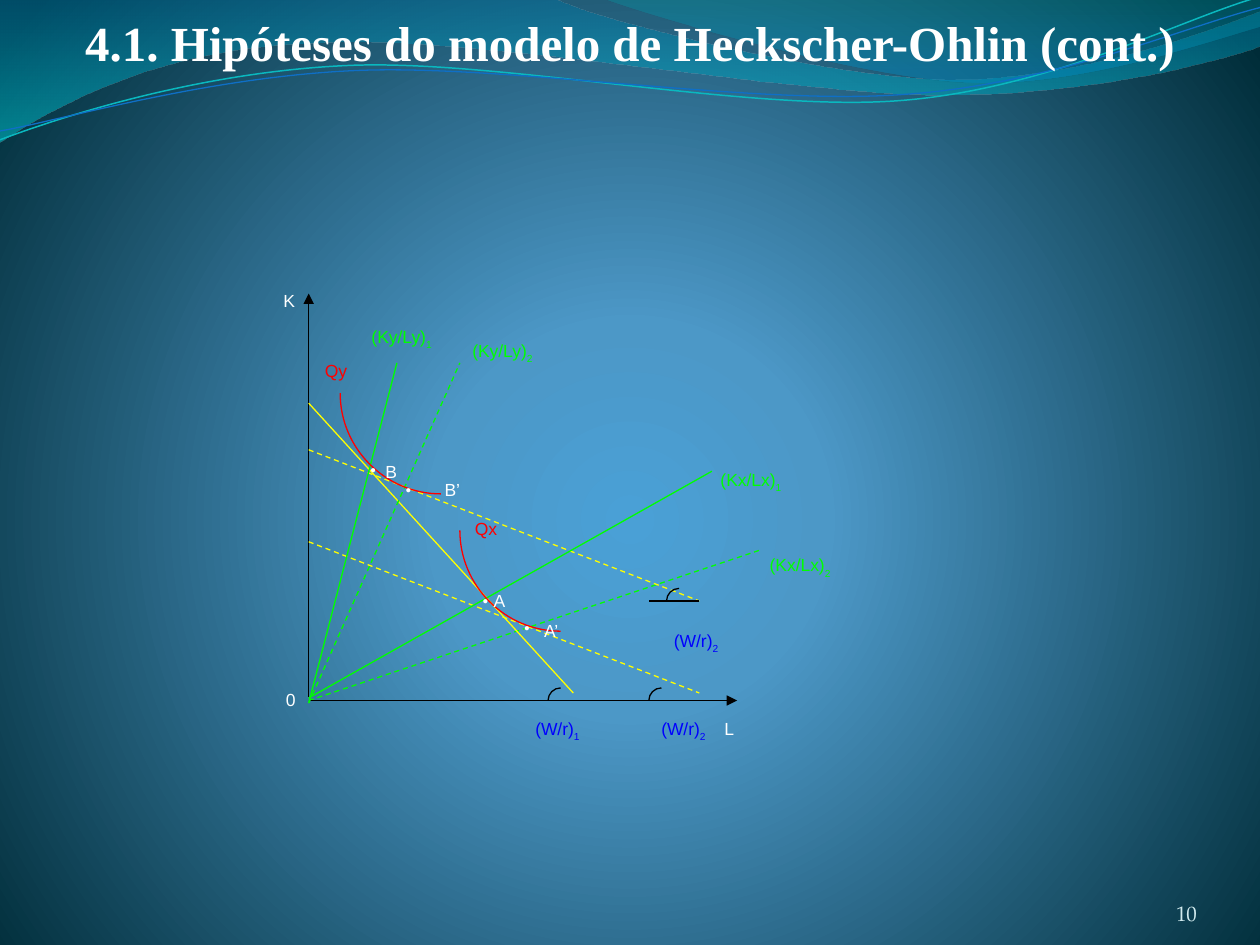
from typing import NamedTuple

from lxml.etree import SubElement
from pptx import Presentation
from pptx.dml.color import RGBColor
from pptx.enum.dml import MSO_LINE
from pptx.enum.shapes import MSO_CONNECTOR
from pptx.enum.text import MSO_ANCHOR, PP_ALIGN
from pptx.oxml.ns import qn
from pptx.util import Cm, Pt

WHITE = RGBColor(0xFF, 0xFF, 0xFF)
BLACK = RGBColor(0x00, 0x00, 0x00)
RED = RGBColor(0xFF, 0x00, 0x00)
GREEN = RGBColor(0x00, 0xFF, 0x00)
BLUE = RGBColor(0x00, 0x00, 0xFF)
YELLOW = RGBColor(0xFF, 0xFF, 0x00)
PALE = RGBColor(0xD1, 0xEA, 0xEE)
TEAL = RGBColor(0x0A, 0xB8, 0xBF)
AZURE = RGBColor(0x0F, 0x6F, 0xC6)
GLOW = [(0, RGBColor(0x4A, 0xA0, 0xD6), 100), (25, RGBColor(0x4C, 0x98, 0xC7), 100),
        (100, RGBColor(0x00, 0x2C, 0x38), 100)]
DEEP = [(0, RGBColor(0x00, 0x74, 0xA1), 45), (100, RGBColor(0x00, 0xC6, 0xCF), 55)]
SHEEN = [(0, RGBColor(0x00, 0xA1, 0xA9), 30), (80, RGBColor(0x00, 0x8B, 0xBF), 45)]
AXIS, ROOT = 2.45, 5.56  # vertical axis and horizontal axis
BEND = 0.55  # control point share of a quarter circle


class Label(NamedTuple):
    text: str
    left: float
    top: float
    color: RGBColor = WHITE
    sub: str = ""
    width: float = 0.7
    face: str = "Arial"


class Line(NamedTuple):
    start: tuple
    end: tuple
    color: RGBColor
    dash: bool = False
    arrow: bool = False


class Wave(NamedTuple):
    """Each leg holds one point for a straight run, three for a curve."""
    start: tuple
    legs: list
    stops: list = []
    color: RGBColor = BLACK
    weight: float = 0.75


WAVES = [
    Wave((0, 0), [
        [(4.4, -0.01)],
        [(4.76, 0.17), (6.64, 0.63), (7.58, 0.63)],
        [(8.53, 0.63), (9.58, 0.26), (10, 0.09)],
        [(10.01, 0.36)],
        [(9.83, 0.44), (8.7, 0.76), (7.46, 0.75)],
        [(6.22, 0.75), (3.82, 0.28), (2.57, 0.34)],
        [(1.29, 0.36), (0.46, 0.83), (-0.01, 1.13)]], DEEP),
    Wave((4.79, -0.01), [
        [(5.09, 0.11), (6.82, 0.62), (7.69, 0.65)],
        [(8.56, 0.69), (9.61, 0.32), (10, 0.21)],
        [(10, 0)]], SHEEN),
    Wave((0, 1.11), [
        [(0.48, 0.93), (1.58, 0.57), (2.77, 0.52)],
        [(3.95, 0.47), (5.93, 0.89), (7.13, 0.8)],
        [(8.33, 0.71), (9.38, 0.15), (9.98, -0.02)]], color=TEAL, weight=0.85),
    Wave((0, 1.04), [
        [(0.47, 0.96), (1.64, 0.61), (2.83, 0.56)],
        [(4.03, 0.51), (5.97, 0.84), (7.17, 0.75)],
        [(8.36, 0.67), (9.41, 0.21), (10, 0.06)]], color=AZURE),
]

LINES = [
    Line((AXIS, ROOT), (6.05, 4.36), GREEN, dash=True),
    Line((AXIS, 5.53), (AXIS, 2.33), BLACK, arrow=True),
    Line((AXIS, ROOT), (5.85, ROOT), BLACK, arrow=True),
    Line((AXIS, 3.2), (4.55, 5.5), YELLOW),
    Line((AXIS, 4.3), (5.55, 5.5), YELLOW, dash=True),
    Line((AXIS, 3.57), (5.55, 4.77), YELLOW, dash=True),
    Line((5.55, 4.77), (5.15, 4.77), BLACK),
    Line((AXIS, 5.54), (5.65, 3.74), GREEN),
    Line((AXIS, 5.58), (3.65, 2.88), GREEN, dash=True),
    Line((AXIS, 5.58), (3.15, 2.88), GREEN),
]

# left, top, size, whether it bulges downwards, colour
ARCS = [
    (2.7, 3.12, 0.8, True, RED),
    (3.65, 4.21, 0.8, True, RED),
    (5.29, 4.67, 0.1, False, BLACK),
    (5.15, 5.46, 0.1, False, BLACK),
    (4.35, 5.46, 0.1, False, BLACK),
]

DOTS = [(4.06, 4.85), (3.73, 4.63), (3.12, 3.75), (2.84, 3.59)]
LABELS = [Label("•", x, y, face="Times New Roman") for x, y in DOTS] + [
    Label("B’", 3.43, 3.75),
    Label("B", 2.96, 3.61),
    Label("A", 3.82, 4.63),
    Label("A’", 4.22, 4.87),
    Label("Qx", 3.67, 4.06, RED),
    Label("Qy", 2.48, 2.81, RED),
    Label("K", 2.15, 2.25),
    Label("L", 5.65, 5.65),
    Label("0", 2.17, 5.42),
    Label("(W/r)", 5.25, 4.95, BLUE, "2"),
    Label("(W/r)", 5.15, 5.65, BLUE, "2"),
    Label("(W/r)", 4.15, 5.65, BLUE, "1"),
    Label("(Kx/Lx)", 5.62, 3.67, GREEN, "1", 0.8),
    Label("(Kx/Lx)", 6.01, 4.35, GREEN, "2", 0.8),
    Label("(Ky/Ly)", 2.85, 2.54, GREEN, "1", 0.8),
    Label("(Ky/Ly)", 3.65, 2.65, GREEN, "2", 0.8),
]


def span(*units: float) -> list:
    """Turn layout units of 2.54 cm into lengths."""
    return [Cm(unit * 2.54) for unit in units]


def blend(host, stops: list, circle: bool = False) -> None:
    """Refill the gradient under host with stops of place, colour, opacity."""
    grad = host.xpath(".//a:gradFill")[0]
    for child in list(grad):
        grad.remove(child)
    group = SubElement(grad, qn("a:gsLst"))
    for place, color, alpha in stops:
        stop = SubElement(group, qn("a:gs"), pos=str(place * 1000))
        tint = SubElement(stop, qn("a:srgbClr"), val=str(color))
        if alpha < 100:
            SubElement(tint, qn("a:alpha"), val=str(alpha * 1000))
    if circle:
        core = SubElement(grad, qn("a:path"), {"path": "circle"})
        SubElement(core, qn("a:fillToRect"), l="10000", t="110000", r="10000", b="100000")
    else:
        SubElement(grad, qn("a:lin"), ang="5400000", scaled="1")


def draw_wave(slide, wave: Wave) -> None:
    form = slide.shapes.build_freeform(*span(*wave.start))
    points = [tuple(span(*point)) for leg in wave.legs for point in leg]
    form.add_line_segments(points, close=bool(wave.stops))
    shape = form.convert_to_shape()
    shape.shadow.inherit = False
    steps = iter(shape._element.xpath(".//a:lnTo"))
    for leg in wave.legs:
        group = [next(steps) for _ in leg]
        if len(group) == 3:
            curve = group[0].makeelement(qn("a:cubicBezTo"))
            group[0].addprevious(curve)
            for step in group:
                curve.append(step[0])
                step.getparent().remove(step)
    if wave.stops:
        shape.fill.gradient()
        blend(shape._element, wave.stops)
        shape.line.fill.background()
    else:
        shape.fill.background()
        shape.line.color.rgb = wave.color
        shape.line.width = Pt(wave.weight)


def draw_arc(slide, left: float, top: float, size: float, down: bool, color: RGBColor) -> None:
    """Draw the left quarter of a circle, lower or upper."""
    far, near = (top + size, top) if down else (top, top + size)
    bend = BEND * (far - near)
    leg = [(left + size * (1 - BEND), far), (left, near + bend), (left, near)]
    draw_wave(slide, Wave((left + size, far), [leg], color=color))


def draw_line(slide, item: Line) -> None:
    link = slide.shapes.add_connector(
        MSO_CONNECTOR.STRAIGHT, *span(*item.start), *span(*item.end))
    link.line.color.rgb = item.color
    link.line.width = Pt(0.75)
    if item.dash:
        link.line.dash_style = MSO_LINE.DASH
    if item.arrow:
        SubElement(link.line._get_or_add_ln(), qn("a:tailEnd"), type="triangle")
    SubElement(link._element.spPr, qn("a:effectLst"))


def add_text(slide, box: tuple, text: str, style: dict, sub: str = "",
             align: PP_ALIGN = PP_ALIGN.LEFT):
    frame = slide.shapes.add_textbox(*span(*box)).text_frame
    frame.word_wrap = True
    para = frame.paragraphs[0]
    para.alignment = align
    for piece in filter(None, (text, sub)):
        run = para.add_run()
        run.text = piece
        for name, value in style.items():
            if name == "color":
                run.font.color.rgb = value
            else:
                setattr(run.font, name, value)
    if sub:
        run.font._element.set("baseline", "-30000")
    return frame


def main() -> None:
    deck = Presentation()
    deck.slide_width, deck.slide_height = span(10, 7.5)
    slide = deck.slides.add_slide(deck.slide_layouts[6])
    slide.background.fill.gradient()
    blend(slide._element, GLOW, circle=True)
    for wave in WAVES:
        draw_wave(slide, wave)
    add_text(slide, (0, 0.05, 10, 0.57), "4.1. Hipóteses do modelo de Heckscher-Ohlin (cont.)",
             {"size": Pt(28), "name": "Times New Roman", "bold": True, "color": WHITE},
             align=PP_ALIGN.CENTER)
    page = add_text(slide, (8.67, 6.95, 0.83, 0.4), "10",
                    {"size": Pt(12), "name": "TeX Gyre Pagella", "color": PALE},
                    align=PP_ALIGN.RIGHT)
    page.vertical_anchor = MSO_ANCHOR.BOTTOM
    for side in ("left", "top", "right", "bottom"):
        setattr(page, f"margin_{side}", 0)
    for item in LINES:
        draw_line(slide, item)
    for arc in ARCS:
        draw_arc(slide, *arc)
    for tag in LABELS:
        add_text(slide, (tag.left, tag.top, tag.width, 0.3), tag.text,
                 {"size": Pt(10), "name": tag.face, "color": tag.color}, tag.sub)
    deck.save("out.pptx")


if __name__ == "__main__":
    main()
